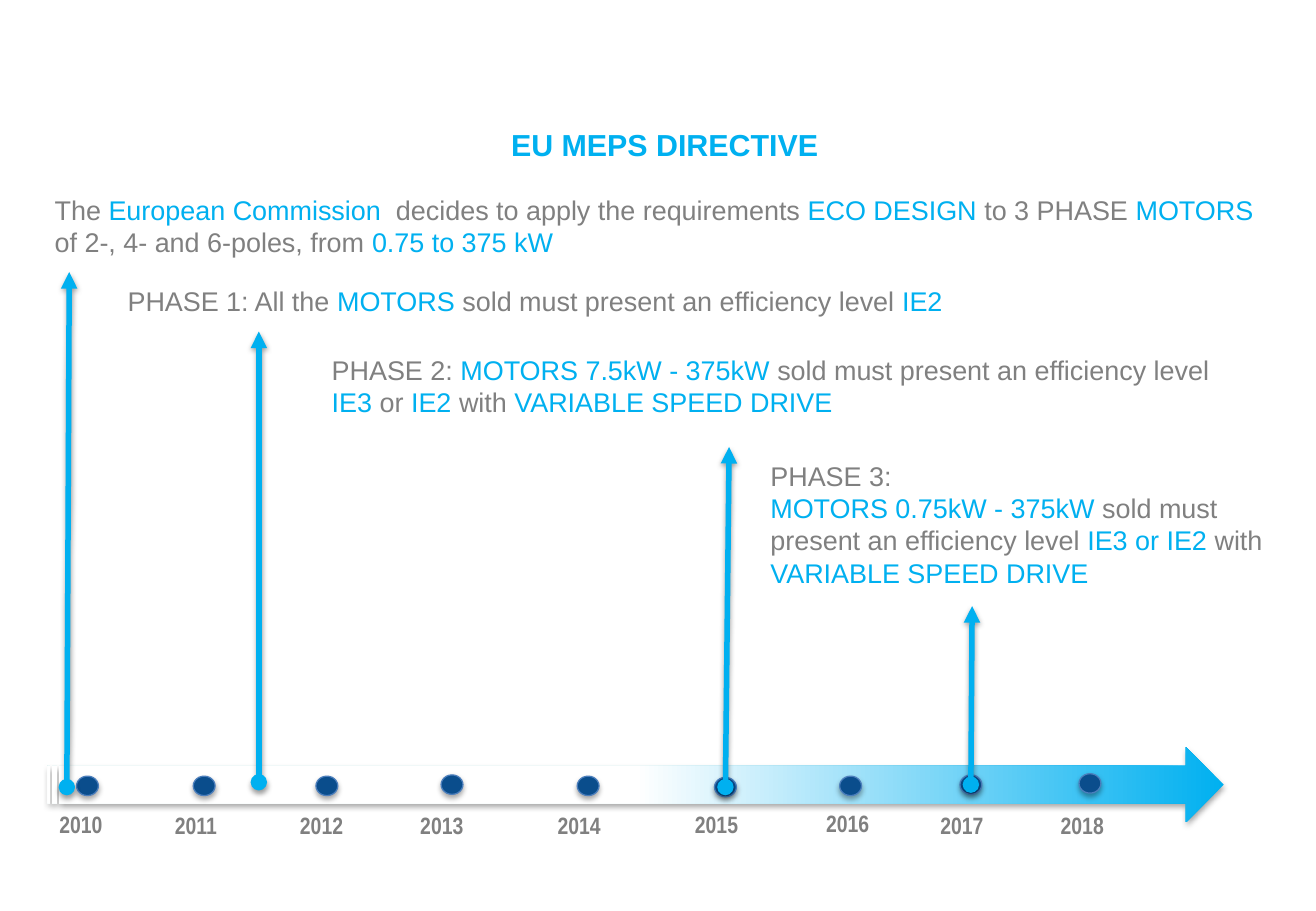
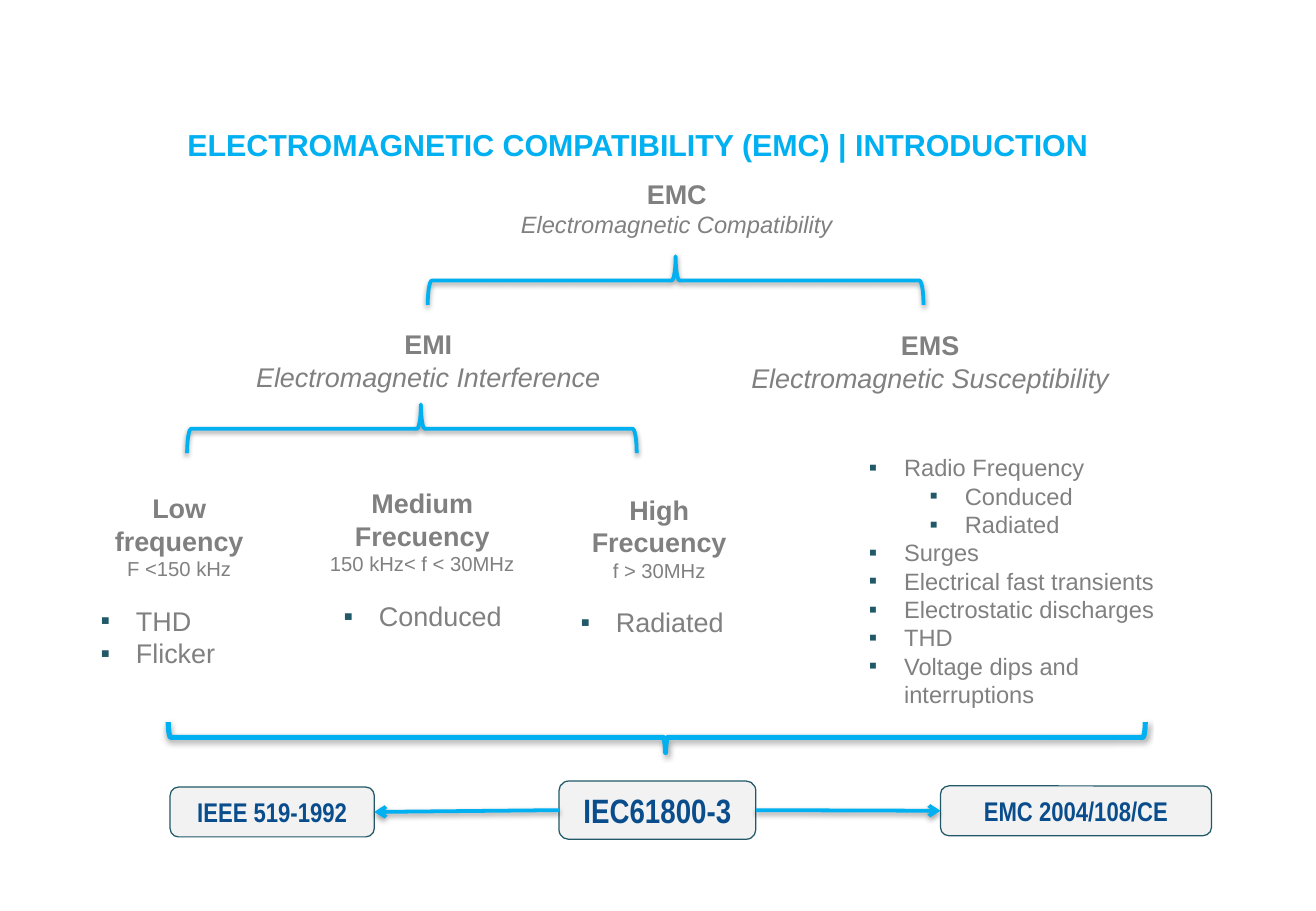
"""Build two slides on motor efficiency rules and electromagnetic compatibility."""
import lxml.etree
import pptx
import pptx.dml.color
import pptx.enum.shapes
import pptx.enum.text
import pptx.oxml.ns
import pptx.util

PX = 9144
SKY = pptx.dml.color.RGBColor(0x00, 0xB0, 0xF0)
NAVY = pptx.dml.color.RGBColor(0x0A, 0x4D, 0x8C)
RIM = pptx.dml.color.RGBColor(0x4B, 0x7E, 0xBC)
TEAL = pptx.dml.color.RGBColor(0x21, 0x59, 0x68)
GREY = pptx.dml.color.RGBColor(0x80, 0x80, 0x80)
PALE = pptx.dml.color.RGBColor(0xF2, 0xF2, 0xF2)
WHITE = pptx.dml.color.RGBColor(0xFF, 0xFF, 0xFF)
SHAPE = pptx.enum.shapes.MSO_SHAPE
ALIGN = pptx.enum.text.PP_ALIGN
ANCHOR = pptx.enum.text.MSO_ANCHOR
LEFT_SIDE, RIGHT_SIDE = 1, 3


def px(*lengths):
    return [pptx.util.Emu(length * PX) for length in lengths]


def child(parent, tag, **attributes):
    return lxml.etree.SubElement(parent, pptx.oxml.ns.qn(tag), attributes)


def write(frame, text, size=16, font="Arial", color=GREY, accent=SKY, bold=False,
          italic=False, align=ALIGN.LEFT, before=0, bullet_indent=0, level=0):
    paragraph = frame.add_paragraph() if frame.text else frame.paragraphs[0]
    paragraph.alignment = align
    paragraph.level = level
    paragraph.space_before = pptx.util.Pt(before)
    if bullet_indent:
        properties = paragraph._p.get_or_add_pPr()
        properties.set("marL", str(bullet_indent * PX))
        properties.set("indent", str(-29 * PX))
        child(child(properties, "a:buClr"), "a:srgbClr", val=str(TEAL))
        child(properties, "a:buFont", typeface="Arial")
        child(properties, "a:buChar", char="▪")
    for position, part in enumerate(text.split("*")):
        if part:
            run = paragraph.add_run()
            run.text = part
            run.font.name = font
            run.font.size = pptx.util.Pt(size)
            run.font.bold = bold
            run.font.italic = italic
            run.font.color.rgb = accent if position % 2 else color


class Deck:
    """Hold the shared style and the slide being filled."""

    def __init__(self):
        self.show = pptx.Presentation()
        self.show.slide_width, self.show.slide_height = px(1083, 750)
        self.slide = None

    def start(self, title, left, width, layout):
        self.slide = self.show.slides.add_slide(self.show.slide_layouts[layout])
        frame = self.place(self.slide.shapes.title, left, 99, width, 40)
        write(frame, title, size=18, color=SKY, bold=True, align=ALIGN.CENTER)

    def place(self, holder, *box):
        holder.left, holder.top, holder.width, holder.height = px(*box)
        frame = holder.text_frame
        frame.word_wrap = True
        frame.auto_size = pptx.enum.text.MSO_AUTO_SIZE.NONE
        frame.vertical_anchor = ANCHOR.TOP
        return frame

    def body(self, *box):
        return self.place(self.slide.placeholders[1], *box)

    def text_area(self, *box, inset=10):
        frame = self.place(self.slide.shapes.add_textbox(*px(*box)), *box)
        frame.margin_left = px(inset)[0]
        return frame

    def shadow(self, item, alpha, distance):
        properties = item._element.spPr
        effects = properties.find(pptx.oxml.ns.qn("a:effectLst"))
        if effects is None:
            effects = child(properties, "a:effectLst")
        outer = child(effects, "a:outerShdw", blurRad="40000", dist=str(distance),
                      dir="5400000", rotWithShape="0")
        child(child(outer, "a:srgbClr", val="000000"), "a:alpha", val=str(alpha * 1000))

    def shape(self, kind, *box, fill=None, line=None, weight=0.75):
        item = self.slide.shapes.add_shape(kind, *px(*box))
        item.shadow.inherit = False
        if fill is None:
            item.fill.background()
        else:
            item.fill.solid()
            item.fill.fore_color.rgb = fill
        if line is None:
            item.line.fill.background()
        else:
            item.line.color.rgb = line
            item.line.width = pptx.util.Pt(weight)
        return item

    def year_arrow(self, *box):
        item = self.shape(SHAPE.STRIPED_RIGHT_ARROW, *box)
        item.fill.gradient()
        item.fill.gradient_angle = 180
        for stop, color, position in zip(item.fill.gradient_stops, (SKY, WHITE), (0, 0.5)):
            stop.color.rgb = color
            stop.position = position
        self.shadow(item, 35, 23000)

    def year_dot(self, left, top):
        dot = self.shape(SHAPE.OVAL, left, top, 18, 16, fill=NAVY, line=RIM)
        self.shadow(dot, 35, 23000)

    def brace(self, kind, *box, middle=0.5, weight=2.25):
        item = self.shape(kind, *box, line=SKY, weight=weight)
        item.rotation = 270
        item.adjustments[0] = 0.083
        item.adjustments[1] = middle
        self.shadow(item, 38, 20000)

    def standard(self, name, *box, size=16):
        item = self.shape(SHAPE.ROUNDED_RECTANGLE, *box, fill=PALE, line=TEAL)
        frame = item.text_frame
        frame.word_wrap = True
        frame.vertical_anchor = ANCHOR.MIDDLE
        write(frame, name, size=size, font="Arial Narrow", color=NAVY, bold=True,
              align=ALIGN.CENTER)
        return item

    def arrow(self, *ends, weight=2.25, head=None, tail="arrow", joined=None):
        item = self.slide.shapes.add_connector(
            pptx.enum.shapes.MSO_CONNECTOR.STRAIGHT, *px(*ends))
        if joined:
            source, source_side, target, target_side = joined
            item.begin_connect(source, source_side)
            item.end_connect(target, target_side)
        item.line.color.rgb = SKY
        item.line.width = pptx.util.Pt(weight)
        outline = item.line._get_or_add_ln()
        if head:
            child(outline, "a:headEnd", type=head)
        child(outline, "a:tailEnd", type=tail)
        self.shadow(item, 38, 20000)

    def heading(self, name, meaning, *box, meaning_size=16):
        frame = self.text_area(*box)
        write(frame, name, bold=True, align=ALIGN.CENTER)
        write(frame, meaning, size=meaning_size, italic=True, align=ALIGN.CENTER)

    def band(self, names, limits, effects, *box):
        frame = self.text_area(*box)
        for name in names:
            write(frame, name, bold=True, align=ALIGN.CENTER)
        write(frame, limits, size=12, align=ALIGN.CENTER)
        for position, effect in enumerate(effects):
            write(frame, effect, bullet_indent=49, before=0 if position else 14)


def directive(deck):
    deck.start("EU MEPS DIRECTIVE", 0, 1094, layout=5)
    deck.year_arrow(39, 615, 968, 62)
    years = [
        (63, 639, 39, 662), (159, 639, 134, 663), (260, 639, 237, 663),
        (363, 638, 336, 663), (475, 639, 449, 663), (588, 640, 562, 662),
        (691, 639, 670, 661), (790, 638, 764, 663), (888, 637, 863, 663),
    ]
    for year, (dot_left, dot_top, left, top) in enumerate(years, 2010):
        deck.year_dot(dot_left, dot_top)
        write(deck.text_area(left, top, 69, 34), str(year), size=14,
              font="Arial Narrow", bold=True)
    for ends in [(213, 644, 213, 273), (55, 648, 57, 224),
                 (597, 648, 600, 368), (799, 646, 800, 499)]:
        deck.arrow(*ends, weight=3.25, head="oval", tail="triangle")
    phases = [
        ((33, 154, 1030, 91),
         ["The *European Commission  *decides to apply the requirements *ECO DESIGN *"
          "to 3 PHASE *MOTORS *of 2-, 4- and 6-poles, from *0.75 to 375 kW"]),
        ((93, 229, 961, 64),
         ["PHASE 1: All the *MOTORS *sold must present an efficiency level *IE2"]),
        ((261, 286, 758, 91),
         ["PHASE 2: *MOTORS 7.5kW - 375kW *sold must present an efficiency level* IE3 *"
          "or *IE2 *with *VARIABLE SPEED DRIVE"]),
        ((622, 373, 462, 145),
         ["PHASE 3:",
          "*MOTORS 0.75kW - 375kW *sold must present an efficiency level *"
          "IE3 or IE2 *with *VARIABLE SPEED DRIVE"]),
    ]
    for box, lines in phases:
        frame = deck.text_area(*box, inset=12)
        for line in lines:
            write(frame, line)


def compatibility(deck):
    deck.start("ELECTROMAGNETIC COMPATIBILITY (EMC) | INTRODUCTION", 144, 762, layout=1)
    deck.heading("EMC", "Electromagnetic Compatibility", 343, 141, 428, 61, meaning_size=14)
    deck.heading("EMI", "Electromagnetic Interference", 181, 265, 343, 64)
    deck.heading("EMS", "Electromagnetic Susceptibility", 594, 266, 343, 64)
    deck.brace(SHAPE.RIGHT_BRACE, 536, 27, 40, 408)
    deck.brace(SHAPE.RIGHT_BRACE, 319, 168, 40, 370, middle=0.52)
    deck.brace(SHAPE.LEFT_BRACE, 528, 205, 25, 804, middle=0.509, weight=3)

    deck.band(["Low", "frequency"], "F <150 kHz", ["THD", "Flicker"], 53, 400, 189, 158)
    deck.band(["Medium", "Frecuency"], "150 kHz< f < 30MHz", ["Conduced"],
              253, 396, 189, 131)
    deck.band(["High", "Frecuency"], "f > 30MHz", ["Radiated"], 448, 401, 189, 131)

    susceptibility = deck.body(685, 368, 298, 222)
    for level, effect in [
            (0, "Radio Frequency"), (1, "Conduced"), (1, "Radiated"), (0, "Surges"),
            (0, "Electrical fast transients"), (0, "Electrostatic discharges"),
            (0, "THD"), (0, "Voltage dips and interruptions")]:
        write(susceptibility, effect, size=14, bullet_indent=49 + 50 * level, level=level)

    drives = deck.standard("IEC61800-3", 460, 643, 162, 48, size=20)
    european = deck.standard("EMC 2004/108/CE", 774, 647, 223, 41)
    harmonics = deck.standard("IEEE 519-1992", 140, 648, 168, 41)
    deck.arrow(622, 667, 774, 668, joined=(drives, RIGHT_SIDE, european, LEFT_SIDE))
    deck.arrow(460, 667, 308, 669, joined=(drives, LEFT_SIDE, harmonics, RIGHT_SIDE))


def main():
    deck = Deck()
    directive(deck)
    compatibility(deck)
    deck.show.save("out.pptx")


if __name__ == "__main__":
    main()
